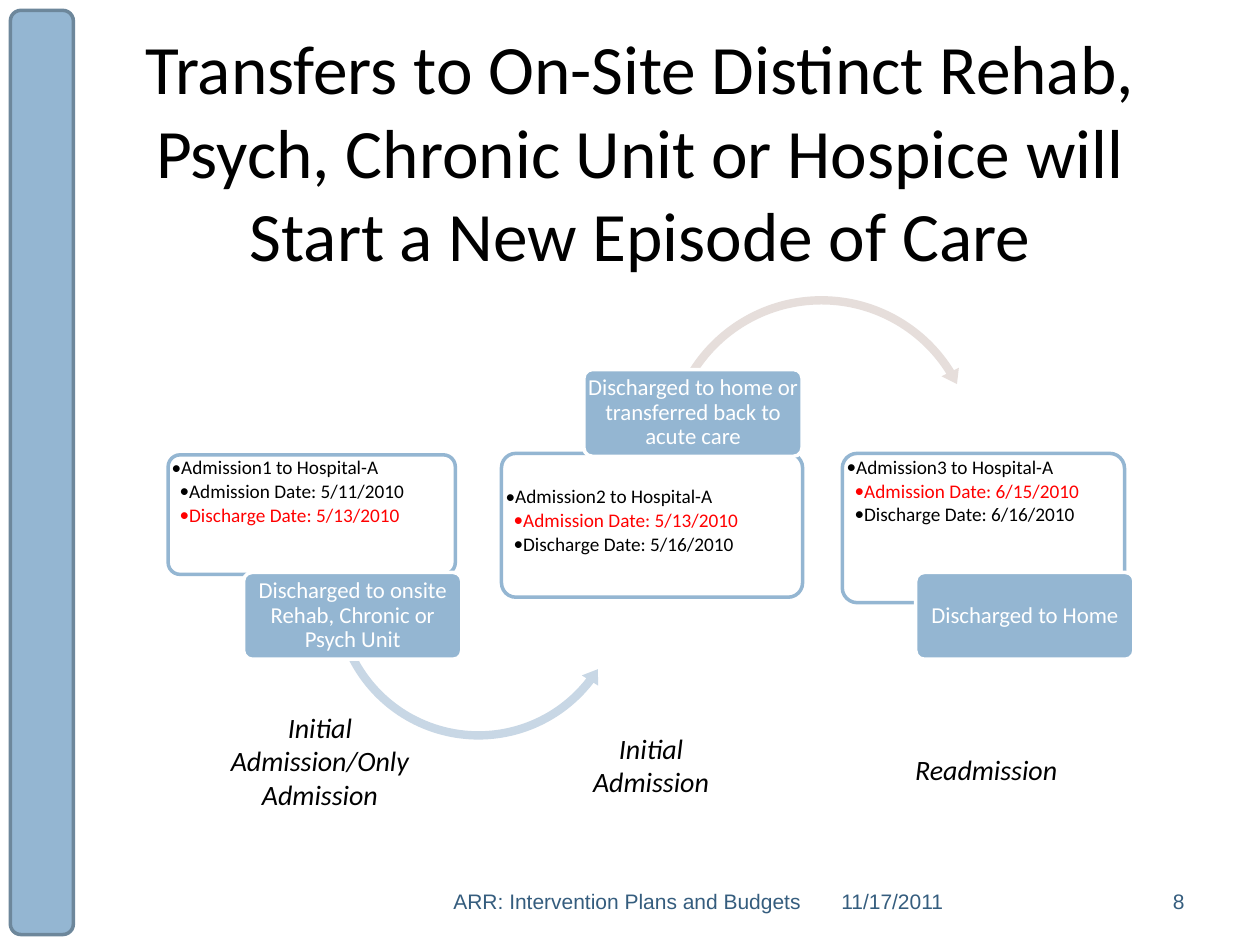
from lxml.etree import SubElement
from pptx import Presentation
from pptx.dml.color import RGBColor
from pptx.enum.shapes import MSO_SHAPE
from pptx.enum.text import MSO_ANCHOR, MSO_AUTO_SIZE, PP_ALIGN
from pptx.oxml.ns import qn
from pptx.util import Cm, Pt

BLUE, WHITE, BLACK, RED, NAVY = "94B6D2", "FFFFFF", "000000", "FF0000", "355D7E"
LABEL_SIZE = (4.4, 1.75)
INDENT = 0.16

STAYS = [
    {
        "card": (3.39, 9.17, 5.79, 2.41),
        "top_gap": 0,
        "lines": [("Admission1 to Hospital-A", BLACK),
                  ("Admission Date: 5/11/2010", BLACK),
                  ("Discharge Date: 5/13/2010", RED)],
        "arc": (MSO_SHAPE.LEFT_CIRCULAR_ARROW, (6.61, 8.95, 6.07, 6.07), "C8D7E5",
                (0.028, 3.365, 22.578, 91.703, 0.032)),
        "label": (4.91, 11.54),
        "outcome": "Discharged to onsite Rehab, Chronic or Psych Unit",
    },
    {
        "card": (10.11, 9.14, 6.07, 2.9),
        "top_gap": 0.6,
        "lines": [("Admission2 to Hospital-A", BLACK),
                  ("Admission Date: 5/13/2010", RED),
                  ("Discharge Date: 5/16/2010", BLACK)],
        "arc": (MSO_SHAPE.CIRCULAR_ARROW, (13.31, 5.86, 6.5, 6.5), "E6DEDB",
                (0.026, 3.128, 196.928, 127.566, 0.03)),
        "label": (11.77, 7.45),
        "outcome": "Discharged to home or transferred back to acute care",
    },
    {
        "card": (16.98, 9.14, 5.69, 3.01),
        "top_gap": 0,
        "lines": [("Admission3 to Hospital-A", BLACK),
                  ("Admission Date: 6/15/2010", RED),
                  ("Discharge Date: 6/16/2010", BLACK)],
        "arc": None,
        "label": (18.46, 11.54),
        "outcome": "Discharged to Home",
    },
]

VERDICTS = [
    ("Initial Admission/Only Admission", (3.81, 14.18, 5.28, 2.31), PP_ALIGN.CENTER),
    ("Initial Admission", (11.22, 14.6, 3.81, 1.63), PP_ALIGN.CENTER),
    ("Readmission", (18.2, 15.03, 3.39, 0.94), PP_ALIGN.LEFT),
]


def color(hex_code):
    """Turn a hex string into a colour."""
    return RGBColor.from_string(hex_code)


def lengths(values):
    """Turn numbers of centimetres into lengths."""
    return [Cm(value) for value in values]


def write(paragraph, text, size=11, font="Calibri", ink=BLACK, italic=False,
          align=PP_ALIGN.LEFT, line_spacing=None, space_after=None):
    """Write formatted text into a paragraph."""
    paragraph.alignment = align
    paragraph.line_spacing = line_spacing
    paragraph.space_after = space_after
    run = paragraph.add_run()
    run.text = text
    run.font.size = Pt(size)
    run.font.name = font
    run.font.italic = italic
    run.font.color.rgb = color(ink)


def set_bullet(paragraph, level):
    """Give a paragraph a hanging bullet at its level."""
    paragraph.level = level
    properties = paragraph._p.get_or_add_pPr()
    properties.set("marL", str(Cm(INDENT * (level + 1))))
    properties.set("indent", str(-Cm(INDENT)))
    SubElement(properties, qn("a:buFont"), typeface="Calibri")
    SubElement(properties, qn("a:buChar"), char="•")


def set_tab(paragraph, position):
    """Add a left tab stop to a paragraph."""
    stops = SubElement(paragraph._p.get_or_add_pPr(), qn("a:tabLst"))
    SubElement(stops, qn("a:tab"), pos=str(Cm(position)), algn="l")


def add_block(slide, preset, place, fill, line=None, adjustments=()):
    """Add a filled preset shape without shadow or text margins."""
    block = slide.shapes.add_shape(preset, *lengths(place))
    block.shadow.inherit = False
    block.fill.solid()
    block.fill.fore_color.rgb = color(fill)
    if line:
        block.line.color.rgb = color(line)
        block.line.width = Pt(2)
    else:
        block.line.fill.background()
    for index, value in enumerate(adjustments):
        block.adjustments[index] = value
    frame = block.text_frame
    frame.word_wrap = True
    frame.margin_left = frame.margin_right = frame.margin_top = frame.margin_bottom = 0
    return block


def add_caption(slide, place, text, anchor=MSO_ANCHOR.TOP, tab=None, **style):
    """Add a text box holding one paragraph."""
    frame = slide.shapes.add_textbox(*lengths(place)).text_frame
    frame.word_wrap = True
    frame.vertical_anchor = anchor
    if tab:
        set_tab(frame.paragraphs[0], tab)
    write(frame.paragraphs[0], text, **style)


def add_title(slide, text):
    """Place and fill the title placeholder."""
    title = slide.shapes.title
    title.left, title.top, title.width, title.height = lengths((1.69, 0.77, 22.43, 4.52))
    frame = title.text_frame
    frame.auto_size = MSO_AUTO_SIZE.NONE
    frame.vertical_anchor = MSO_ANCHOR.MIDDLE
    write(frame.paragraphs[0], text, size=39.6, align=PP_ALIGN.CENTER)


def add_stay(slide, stay):
    """Add one hospital stay: card, arc to the next stay and outcome label."""
    card = add_block(slide, MSO_SHAPE.ROUNDED_RECTANGLE, stay["card"], WHITE, BLUE, (0.1,))
    frame = card.text_frame
    frame.vertical_anchor = MSO_ANCHOR.TOP
    frame.margin_top = Cm(stay["top_gap"])
    for index, (text, ink) in enumerate(stay["lines"]):
        paragraph = frame.add_paragraph() if index else frame.paragraphs[0]
        set_bullet(paragraph, min(index, 1))
        write(paragraph, text, ink=ink, line_spacing=0.9, space_after=Pt(1.65))
    if stay["arc"]:
        preset, place, fill, adjustments = stay["arc"]
        add_block(slide, preset, place, fill, adjustments=adjustments)
    label = add_block(slide, MSO_SHAPE.ROUNDED_RECTANGLE, stay["label"] + LABEL_SIZE,
                      BLUE, WHITE, (0.1,))
    label.text_frame.vertical_anchor = MSO_ANCHOR.MIDDLE
    write(label.text_frame.paragraphs[0], stay["outcome"], size=13, ink=WHITE,
          align=PP_ALIGN.CENTER, line_spacing=0.9)


def main():
    """Build and save the slide."""
    deck = Presentation()
    deck.slide_width, deck.slide_height = lengths((25.4, 19.05))
    slide = deck.slides.add_slide(deck.slide_layouts[5])
    add_block(slide, MSO_SHAPE.ROUNDED_RECTANGLE, (0.21, 0.21, 1.27, 18.63), BLUE, "6D879B")
    footer_style = {"size": 12, "font": "Arial", "ink": NAVY}
    add_caption(slide, (8.89, 17.78, 11.63, 0.76),
                "ARR: Intervention Plans and Budgets\t11/17/2011", tab=7.82, **footer_style)
    add_caption(slide, (22.43, 17.78, 1.7, 0.76), "8", align=PP_ALIGN.RIGHT, **footer_style)
    add_title(slide, "Transfers to On-Site Distinct Rehab, Psych, Chronic Unit or Hospice "
                     "will Start a New Episode of Care")
    for stay in STAYS:
        add_stay(slide, stay)
    for verdict, place, align in VERDICTS:
        add_caption(slide, place, verdict, anchor=MSO_ANCHOR.MIDDLE, size=16,
                    italic=True, align=align)
    deck.save("out.pptx")


if __name__ == "__main__":
    main()
